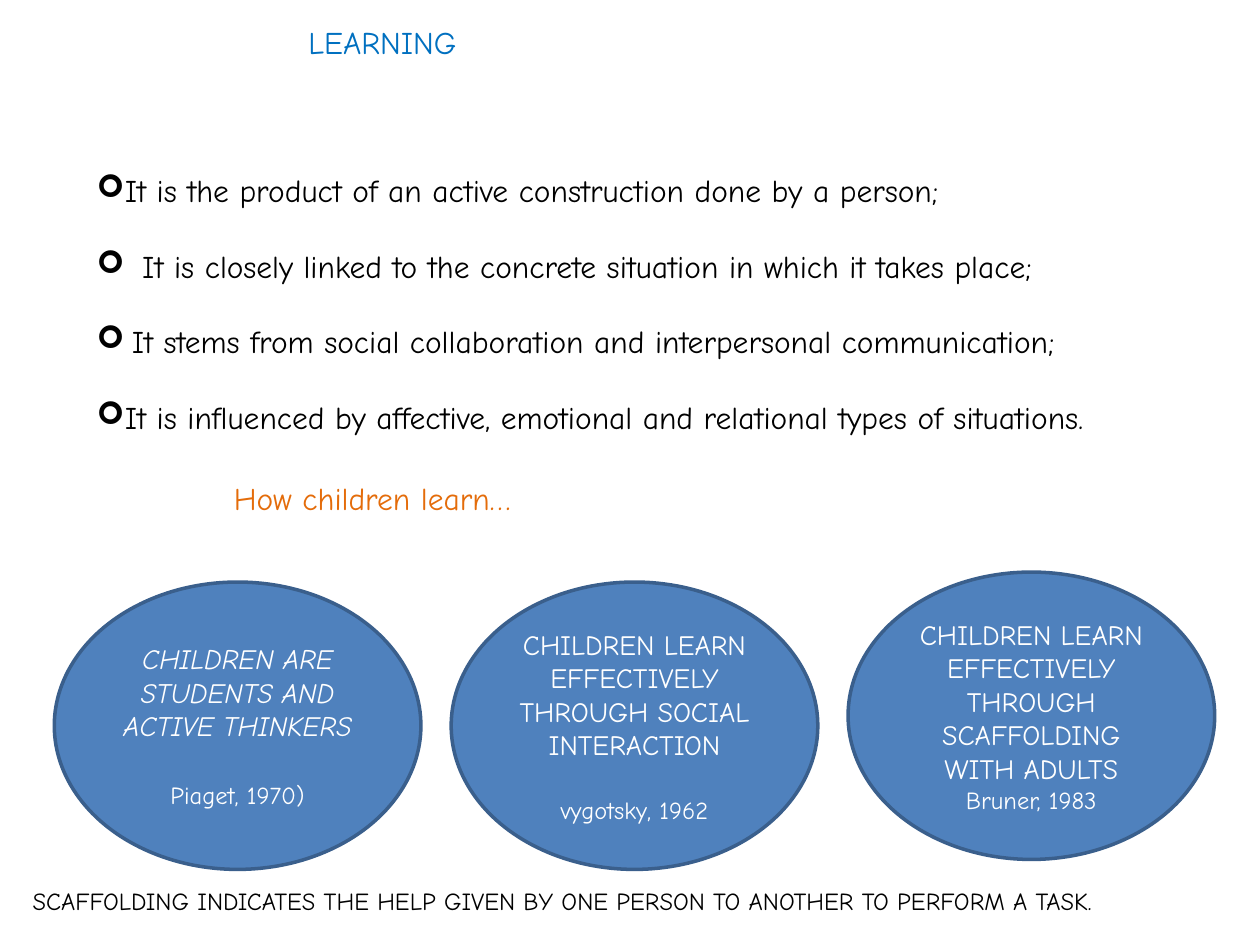
from lxml.etree import SubElement
from pptx import Presentation
from pptx.dml.color import RGBColor
from pptx.enum.shapes import MSO_SHAPE as Shape
from pptx.enum.text import MSO_ANCHOR as Anchor, PP_ALIGN as Align
from pptx.oxml.ns import qn
from pptx.util import Pt

FONT = "Comic Neue"
BLACK, WHITE = "000000", "FFFFFF"
HEADING_BLUE, HEADING_ORANGE = "0070C0", "E46C0A"
OVAL_FILL, OVAL_LINE = "4F81BD", "3A5F8C"

# Text and hanging indent of each point
POINTS = [
    ("It is the product of an active construction done by a person;", 0),
    ("It is closely linked to the concrete situation in which it takes place;", 26),
    ("It stems from social collaboration and interpersonal communication;", 20),
    ("It is influenced by affective, emotional and relational types of situations.", 0),
]

# Statement, its author, italic, gap before the author, drop from the row's top
THEORIES = [
    ("CHILDREN ARE STUDENTS AND ACTIVE THINKERS", "Piaget, 1970)", True, 21.6, 5.7),
    ("CHILDREN LEARN EFFECTIVELY THROUGH SOCIAL INTERACTION", "vygotsky, 1962", False, 19.2, 5.7),
    ("CHILDREN LEARN EFFECTIVELY THROUGH SCAFFOLDING WITH ADULTS", "Bruner, 1983", False, 0, 0),
]


def color(hex_string):
    return RGBColor.from_string(hex_string)


def write(paragraph, text, size, hex_string, align=Align.LEFT, italic=False):
    paragraph.text = text
    paragraph.alignment = align
    for run in paragraph.runs:
        run.font.name = FONT
        run.font.size = Pt(size)
        run.font.italic = italic
        run.font.color.rgb = color(hex_string)


def add_text_frame(slide, box, wrap=True):
    shape = slide.shapes.add_textbox(*map(Pt, box))
    shape.text_frame.word_wrap = wrap
    return shape.text_frame


def add_line(slide, box, text, size, hex_string, align=Align.LEFT, wrap=True):
    text_frame = add_text_frame(slide, box, wrap)
    write(text_frame.paragraphs[0], text, size, hex_string, align)


def add_points(slide, box):
    text_frame = add_text_frame(slide, box)
    for index, (text, indent) in enumerate(POINTS):
        paragraph = text_frame.paragraphs[0]
        if index:
            paragraph = text_frame.add_paragraph()
            paragraph.space_before = Pt(21.6)
        write(paragraph, text, 18, BLACK)
        # Arrow bullet with a hanging indent
        properties = paragraph._p.get_or_add_pPr()
        properties.set("marL", str(Pt(indent)))
        properties.set("indent", str(-Pt(indent)))
        SubElement(properties, qn("a:buFont"), typeface="Wingdings")
        SubElement(properties, qn("a:buChar"), char="➢")


def add_theory(slide, box, statement, author, italic, gap):
    oval = slide.shapes.add_shape(Shape.OVAL, *map(Pt, box))
    oval.shadow.inherit = False
    oval.fill.solid()
    oval.fill.fore_color.rgb = color(OVAL_FILL)
    oval.line.color.rgb = color(OVAL_LINE)
    oval.line.width = Pt(2)
    text_frame = oval.text_frame
    text_frame.word_wrap = True
    text_frame.vertical_anchor = Anchor.MIDDLE
    write(text_frame.paragraphs[0], statement, 16, WHITE, Align.CENTER, italic)
    paragraph = text_frame.add_paragraph()
    paragraph.space_before = Pt(gap)
    write(paragraph, author, 14, WHITE, Align.CENTER)


def add_theories(slide, box):
    left, top, width, height = box
    oval_width, oval_height = 209.5, 164.2
    step = (width - oval_width) / (len(THEORIES) - 1)
    for index, (statement, author, italic, gap, drop) in enumerate(THEORIES):
        oval_box = (left + index * step, top + drop, oval_width, oval_height)
        add_theory(slide, oval_box, statement, author, italic, gap)


def main():
    presentation = Presentation()
    presentation.slide_width, presentation.slide_height = Pt(720), Pt(540)
    slide = presentation.slides.add_slide(presentation.slide_layouts[6])

    # Upper half: what learning is
    add_points(slide, (48.2, 94.3, 646.6, 203.8))
    add_line(slide, (20.2, 9.4, 396.7, 51), "LEARNING", 18, HEADING_BLUE, Align.CENTER, wrap=False)

    # Lower half: how children learn
    add_theories(slide, (31, 326.9, 663.1, 169.9))
    add_line(slide, (14.4, 270, 396.7, 51), "How children learn…", 18, HEADING_ORANGE,
             Align.CENTER, wrap=False)

    # Closing note
    add_line(slide, (11.5, 502.6, 699.8, 24.5),
             "SCAFFOLDING INDICATES THE HELP GIVEN BY ONE PERSON TO ANOTHER TO PERFORM A TASK.",
             14, BLACK)

    presentation.save("out.pptx")


if __name__ == "__main__":
    main()
